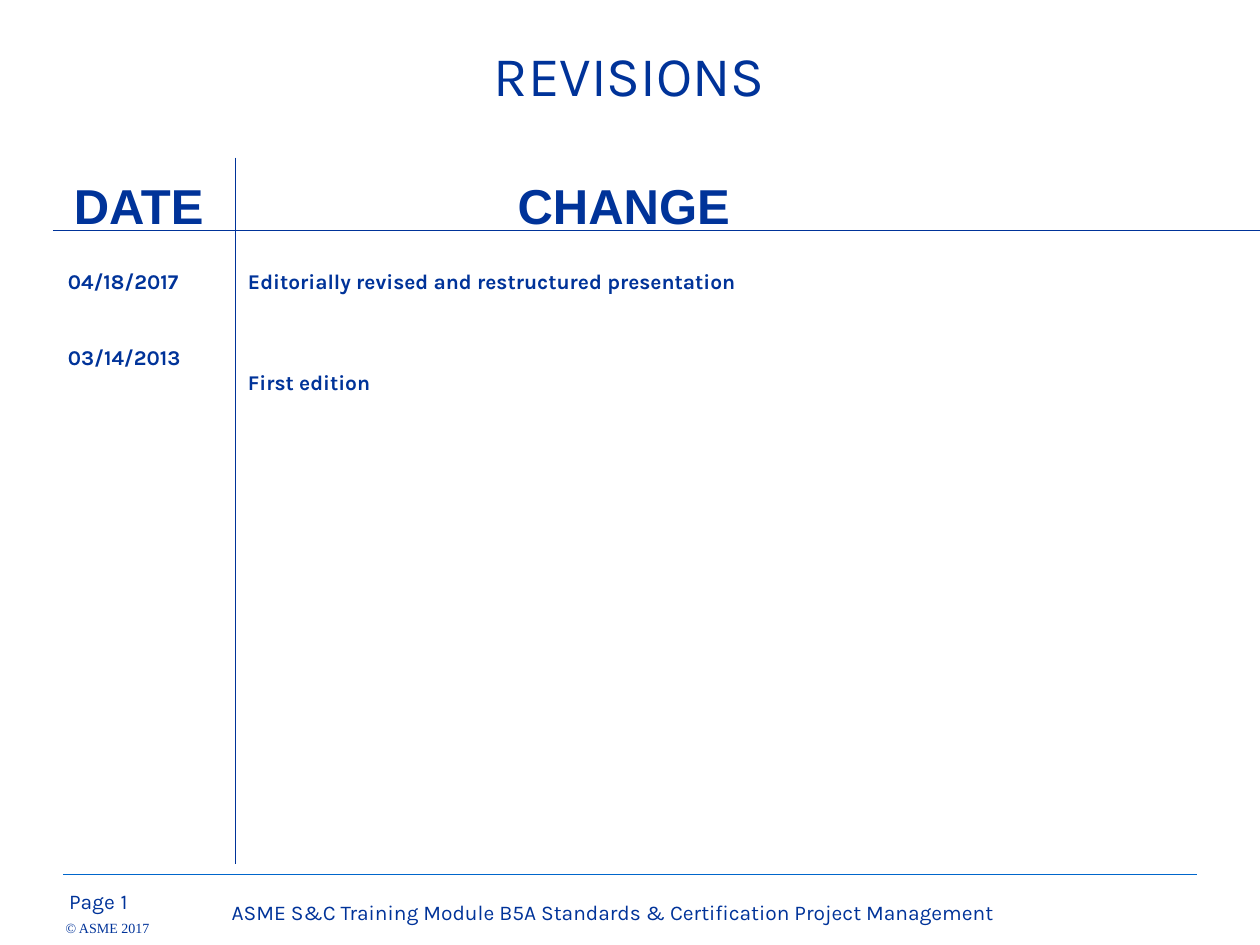
import pptx
import pptx.dml.color
import pptx.enum.shapes
import pptx.enum.text
import pptx.oxml
import pptx.util

Inches = pptx.util.Inches
Pt = pptx.util.Pt
ALIGN = pptx.enum.text.PP_ALIGN

NAVY = pptx.dml.color.RGBColor(0x00, 0x33, 0x99)
BLUE = pptx.dml.color.RGBColor(0x00, 0x66, 0xCC)

TITLE = "REVISIONS"
HEADINGS = [
    ("DATE", (0.39, 1.34, 1.42, 0.59)),
    ("CHANGE", (1.7, 1.34, 6.5, 0.59)),
]
COLUMNS = [
    (["04/18/2017", "03/14/2013"], (0.44, 2.08, 1.45, 4.75), 29.4),
    (["Editorially revised and restructured presentation", "First edition"],
     (1.87, 2.08, 6.96, 4.75), 43.7),
]
FOOTERS = [
    ("Page", (0.45, 7, 0.77, 0.26), ALIGN.LEFT),
    ("1", (0.86, 7, 0.47, 0.26), ALIGN.LEFT),
    ("ASME S&C Training Module B5A Standards & Certification Project Management",
     (1.53, 7.09, 6.67, 0.26), ALIGN.CENTER),
]
COPYRIGHT = "© ASME 2017"
RULES = [
    ((0.5, 6.94), (9.5, 6.94), BLUE, 0.75),
    ((1.87, 1.25), (1.87, 6.86), NAVY, 1),
    ((0.42, 1.83), (10, 1.83), NAVY, 1),
]


def write(box, lines, size, font="Karla", bold=False, align=ALIGN.LEFT, gap=0):
    frame = box.text_frame
    frame.word_wrap = True
    frame.auto_size = pptx.enum.text.MSO_AUTO_SIZE.NONE
    for index, line in enumerate(lines):
        para = frame.add_paragraph() if index else frame.paragraphs[0]
        para.text = line
        para.alignment = align
        if index:
            para.space_before = Pt(gap)
        para.font.name = font
        para.font.size = Pt(size)
        para.font.bold = bold
        para.font.color.rgb = NAVY
    return frame


def add_text(page, area, lines, size, **style):
    box = page.shapes.add_textbox(*map(Inches, area))
    return write(box, lines, size, **style)


def add_rule(page, start, end, color, width):
    rule = page.shapes.add_connector(
        pptx.enum.shapes.MSO_CONNECTOR.STRAIGHT, *map(Inches, start + end))
    rule.line.color.rgb = color
    rule.line.width = Pt(width)
    rule._element.spPr.append(pptx.oxml.parse_xml(
        '<a:effectLst xmlns:a="http://schemas.openxmlformats.org/drawingml/2006/main"/>'))


def main():
    deck = pptx.Presentation()
    deck.slide_width, deck.slide_height = Inches(10), Inches(7.5)
    page = deck.slides.add_slide(deck.slide_layouts[5])

    title = page.shapes.title
    title.left, title.top, title.width, title.height = map(Inches, (0.62, 0.17, 8.75, 0.83))
    frame = write(title, [TITLE], 32, align=ALIGN.CENTER)
    frame.vertical_anchor = pptx.enum.text.MSO_ANCHOR.MIDDLE

    for rule in RULES:
        add_rule(page, *rule)
    for text, area in HEADINGS:
        add_text(page, area, [text], 28, font="Arial", bold=True, align=ALIGN.CENTER)
    for lines, area, gap in COLUMNS:
        add_text(page, area, lines, 12, bold=True, gap=gap)
    for text, area, align in FOOTERS:
        add_text(page, area, [text], 12, align=align)

    frame = add_text(page, (0.52, 7.3, 0.68, 0.13), [COPYRIGHT], 8, font="Times New Roman")
    frame.word_wrap = False
    frame.margin_left = frame.margin_right = frame.margin_top = frame.margin_bottom = 0

    deck.save("out.pptx")


if __name__ == "__main__":
    main()
